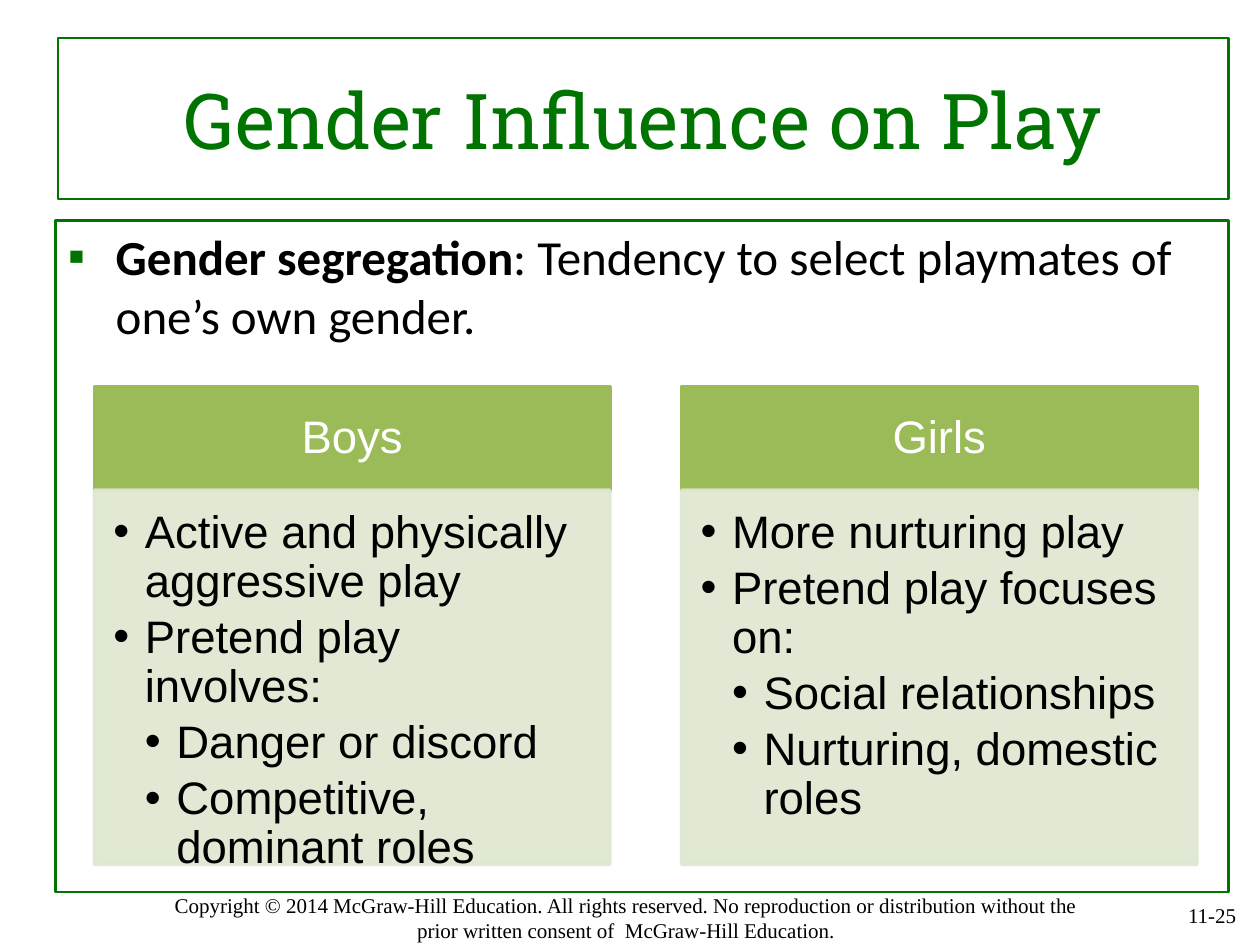
"""Build the slide on how gender influences children's play."""
from lxml import etree
from pptx import Presentation
from pptx.dml.color import RGBColor
from pptx.enum.shapes import MSO_SHAPE
from pptx.enum.text import MSO_ANCHOR, MSO_AUTO_SIZE, PP_ALIGN
from pptx.oxml.ns import qn
from pptx.util import Inches, Pt

RECTANGLE = MSO_SHAPE.RECTANGLE
TOP, MIDDLE = MSO_ANCHOR.TOP, MSO_ANCHOR.MIDDLE
LEFT, CENTER, RIGHT = PP_ALIGN.LEFT, PP_ALIGN.CENTER, PP_ALIGN.RIGHT
FIXED = MSO_AUTO_SIZE.NONE
GREEN = RGBColor(0x00, 0x74, 0x00)
OLIVE = RGBColor(0x9B, 0xBB, 0x59)
PALE = RGBColor(0xDE, 0xE7, 0xD1)
WHITE = RGBColor(0xFF, 0xFF, 0xFF)
BLACK = RGBColor(0x00, 0x00, 0x00)

TITLE_FONT = {"name": "Roboto Slab", "size": Pt(44)}
BODY_FONT = {"name": "Calibri", "size": Pt(28)}
CARD_FONT = {"name": "Arial", "size": Pt(26)}
FOOTER_FONT = {"name": "Times New Roman", "size": Pt(12)}


def write(paragraph, text, font, color, align=LEFT, bold=False):
    paragraph.alignment = align
    run = paragraph.add_run()
    run.text = text
    for key, value in {**font, "bold": bold}.items():
        setattr(run.font, key, value)
    run.font.color.rgb = color


def add_bullet(paragraph, char, color, margin, hanging):
    properties = paragraph._p.get_or_add_pPr()
    properties.set("marL", str(Inches(margin)))
    properties.set("indent", str(-Inches(hanging)))
    bullet_color = etree.SubElement(properties, qn("a:buClr"))
    etree.SubElement(bullet_color, qn("a:srgbClr"), val=str(color))
    etree.SubElement(properties, qn("a:buFont"), typeface="Arial")
    etree.SubElement(properties, qn("a:buChar"), char=char)


prs = Presentation()
prs.slide_width, prs.slide_height = Inches(10), Inches(7.5)
slide = prs.slides.add_slide(prs.slide_layouts[5])

title = slide.shapes.title
title.left, title.top = Inches(0.46), Inches(0.3)
title.width, title.height = Inches(9.29), Inches(1.28)
title.line.color.rgb = GREEN
title.line.width = Pt(1.25)
title.text_frame.auto_size = FIXED
title.text_frame.vertical_anchor = MIDDLE
write(title.text_frame.paragraphs[0], "Gender Influence on Play", TITLE_FONT, GREEN, CENTER)

body = slide.shapes.add_shape(RECTANGLE, Inches(0.44), Inches(1.75), Inches(9.31), Inches(5.33))
body.shadow.inherit = False
body.fill.solid()
body.fill.fore_color.rgb = WHITE
body.line.color.rgb = GREEN
body.line.width = Pt(1.25)
body.text_frame.vertical_anchor = TOP
definition = body.text_frame.paragraphs[0]
add_bullet(definition, "▪", GREEN, 0.38, 0.38)
definition.space_after = Pt(12)
write(definition, "Gender segregation", BODY_FONT, BLACK, bold=True)
write(definition, ": Tendency to select playmates of one’s own gender.", BODY_FONT, BLACK)

groups = {
    "Boys": [
        (1, "Active and physically aggressive play"),
        (1, "Pretend play involves:"),
        (2, "Danger or discord"),
        (2, "Competitive, dominant roles"),
    ],
    "Girls": [
        (1, "More nurturing play"),
        (1, "Pretend play focuses on:"),
        (2, "Social relationships"),
        (2, "Nurturing, domestic roles"),
    ],
}
CARD_LEFT, CARD_STEP, CARD_WIDTH = 0.75, 4.66, 4.09
HEADER_TOP, HEADER_HEIGHT, DETAIL_HEIGHT = 3.07, 0.82, 2.97
HEADER_FRAME = {"vertical_anchor": MIDDLE, "margin_left": Inches(0.2), "margin_top": Inches(0.12),
                "margin_right": Inches(0.2), "margin_bottom": Inches(0.12)}
DETAIL_FRAME = {"vertical_anchor": TOP, "margin_left": Inches(0.15), "margin_top": Inches(0.15),
                "margin_right": Inches(0.2), "margin_bottom": Inches(0.23)}

for column, (group, traits) in enumerate(groups.items()):
    left = Inches(CARD_LEFT + column * CARD_STEP)
    header = slide.shapes.add_shape(
        RECTANGLE, left, Inches(HEADER_TOP), Inches(CARD_WIDTH), Inches(HEADER_HEIGHT))
    details = slide.shapes.add_shape(
        RECTANGLE, left, Inches(HEADER_TOP + HEADER_HEIGHT), Inches(CARD_WIDTH), Inches(DETAIL_HEIGHT))
    for part, color, frame in ((header, OLIVE, HEADER_FRAME), (details, PALE, DETAIL_FRAME)):
        part.shadow.inherit = False
        part.fill.solid()
        part.fill.fore_color.rgb = color
        part.line.color.rgb = color
        part.line.width = Pt(2)
        for key, value in frame.items():
            setattr(part.text_frame, key, value)
    for tint in details._element.spPr.iter(qn("a:srgbClr")):
        etree.SubElement(tint, qn("a:alpha"), val="90000")

    heading = header.text_frame.paragraphs[0]
    heading.line_spacing = 0.9
    write(heading, group, CARD_FONT, WHITE, CENTER)
    for index, (level, trait) in enumerate(traits):
        item = details.text_frame.add_paragraph() if index else details.text_frame.paragraphs[0]
        add_bullet(item, "•", BLACK, 0.25 * level, 0.25)
        item.level = level
        item.line_spacing = 0.9
        item.space_after = Pt(4)
        write(item, trait, CARD_FONT, BLACK)

copyright_line = slide.shapes.add_textbox(Inches(1.27), Inches(7.08), Inches(7.4), Inches(0.4))
copyright_frame = copyright_line.text_frame
copyright_frame.word_wrap = True
for side in ("left", "top", "right", "bottom"):
    setattr(copyright_frame, f"margin_{side}", 0)
write(copyright_frame.paragraphs[0],
      "Copyright © 2014 McGraw-Hill Education. All rights reserved. No reproduction or "
      "distribution without the prior written consent of  McGraw-Hill Education.",
      FOOTER_FONT, BLACK, CENTER)

page_number = slide.shapes.add_textbox(Inches(7.58), Inches(7.06), Inches(2.33), Inches(0.4))
page_number.text_frame.word_wrap = True
page_number.text_frame.vertical_anchor = MIDDLE
write(page_number.text_frame.paragraphs[0], "11-25", FOOTER_FONT, BLACK, RIGHT)

prs.save("out.pptx")
